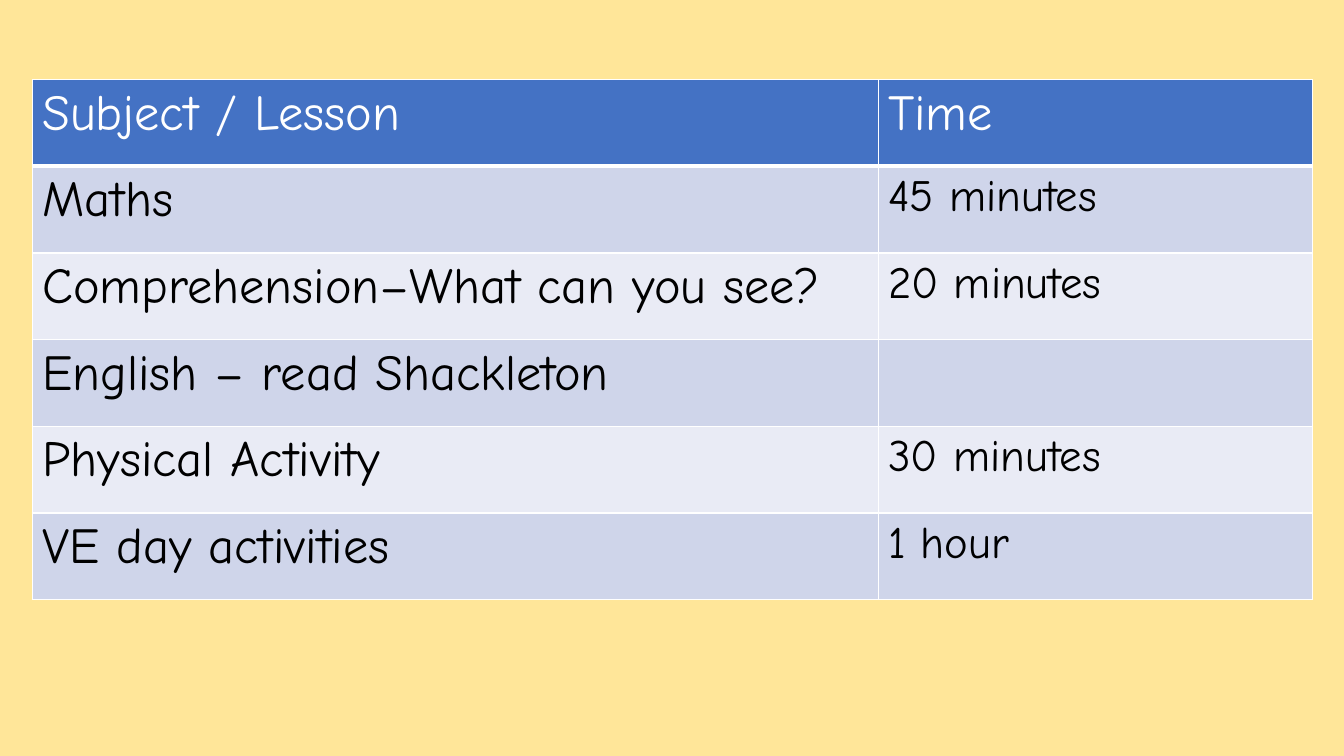
"""Build a one-slide school timetable."""
from dataclasses import dataclass

from lxml import etree
from pptx import Presentation
from pptx.dml.color import RGBColor
from pptx.oxml.ns import qn
from pptx.util import Inches, Pt

BLANK_LAYOUT = 6
SLIDE_W, SLIDE_H = Inches(13.33), Inches(7.5)
LEFT, TOP = Inches(0.32), Inches(0.79)
COL_WIDTHS = (Inches(8.39), Inches(4.31))
ROW_HEIGHT = Inches(0.86)

LESSONS = (
    ("Subject / Lesson", "Time"),
    ("Maths", "45 minutes"),
    ("Comprehension–What can you see?", "20 minutes"),
    ("English – read Shackleton", ""),
    ("Physical Activity", "30 minutes"),
    ("VE day activities", "1 hour"),
)


@dataclass(frozen=True)
class Theme:
    """Colours, font and sizes of the slide."""
    background: str = "FFE699"
    header: str = "4472C4"
    bands: tuple = ("E9EBF5", "CFD5EA")
    header_text: str = "FFFFFF"
    text: str = "000000"
    border: str = "FFFFFF"
    font: str = "Comic Neue"
    large: int = 36
    small: int = 32
    thin: int = 1
    thick: int = 3


THEME = Theme()


def paint(fill, colour):
    """Give a fill one solid colour."""
    fill.solid()
    fill.fore_color.rgb = RGBColor.from_string(colour)


def add_borders(cell, bottom):
    """Draw the four edges of a cell, with its own width at the bottom."""
    tc_pr = cell._tc.get_or_add_tcPr()
    widths = {"lnL": THEME.thin, "lnR": THEME.thin, "lnT": THEME.thin, "lnB": bottom}
    for tag, width in widths.items():
        ln = etree.SubElement(tc_pr, qn(f"a:{tag}"), w=str(Pt(width)))
        fill = etree.SubElement(ln, qn("a:solidFill"))
        etree.SubElement(fill, qn("a:srgbClr"), val=THEME.border)


def write(cell, text, size, colour):
    """Put formatted text in a cell."""
    p = cell.text_frame.paragraphs[0]
    p.font.size = Pt(size)
    if not text:
        return
    r = p.add_run()
    r.text = text
    for name, value in {"name": THEME.font, "size": Pt(size), "bold": False}.items():
        setattr(r.font, name, value)
    r.font.color.rgb = RGBColor.from_string(colour)


def add_timetable(s, lessons):
    """Add the table with a header row and banded lesson rows."""
    shape = s.shapes.add_table(len(lessons), len(COL_WIDTHS), LEFT, TOP,
                               sum(COL_WIDTHS), ROW_HEIGHT * len(lessons))
    table = shape.table
    for column, width in zip(table.columns, COL_WIDTHS):
        column.width = width
    for i, lesson in enumerate(lessons):
        table.rows[i].height = ROW_HEIGHT
        is_header = i == 0
        for j, text in enumerate(lesson):
            cell = table.cell(i, j)
            size = THEME.large if is_header or j == 0 else THEME.small
            write(cell, text, size, THEME.header_text if is_header else THEME.text)
            add_borders(cell, THEME.thick if is_header else THEME.thin)
            paint(cell.fill, THEME.header if is_header else THEME.bands[i % 2])


def main():
    """Create and save the presentation."""
    prs = Presentation()
    prs.slide_width, prs.slide_height = SLIDE_W, SLIDE_H
    s = prs.slides.add_slide(prs.slide_layouts[BLANK_LAYOUT])
    paint(s.background.fill, THEME.background)
    add_timetable(s, LESSONS)
    prs.save("out.pptx")


if __name__ == "__main__":
    main()
